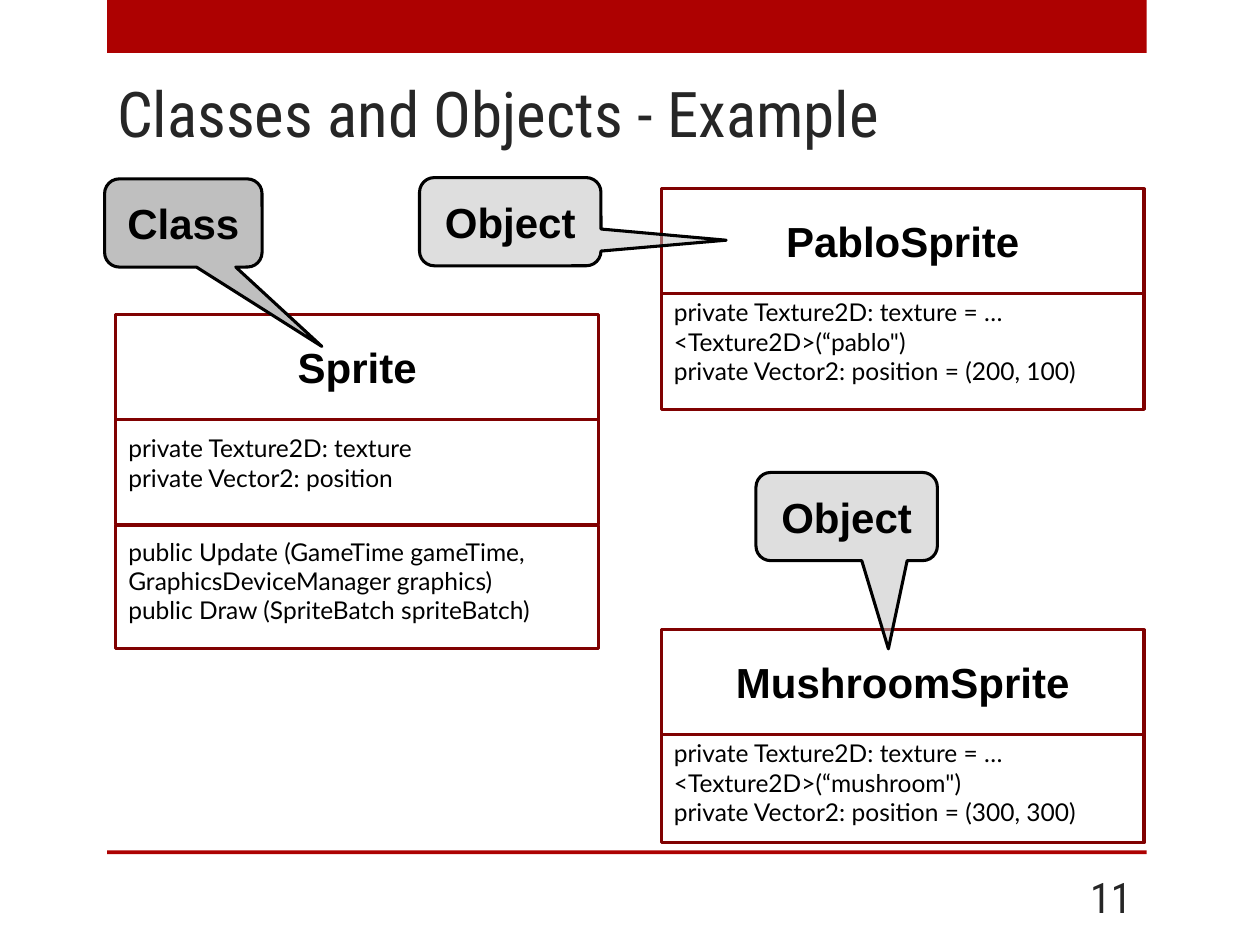
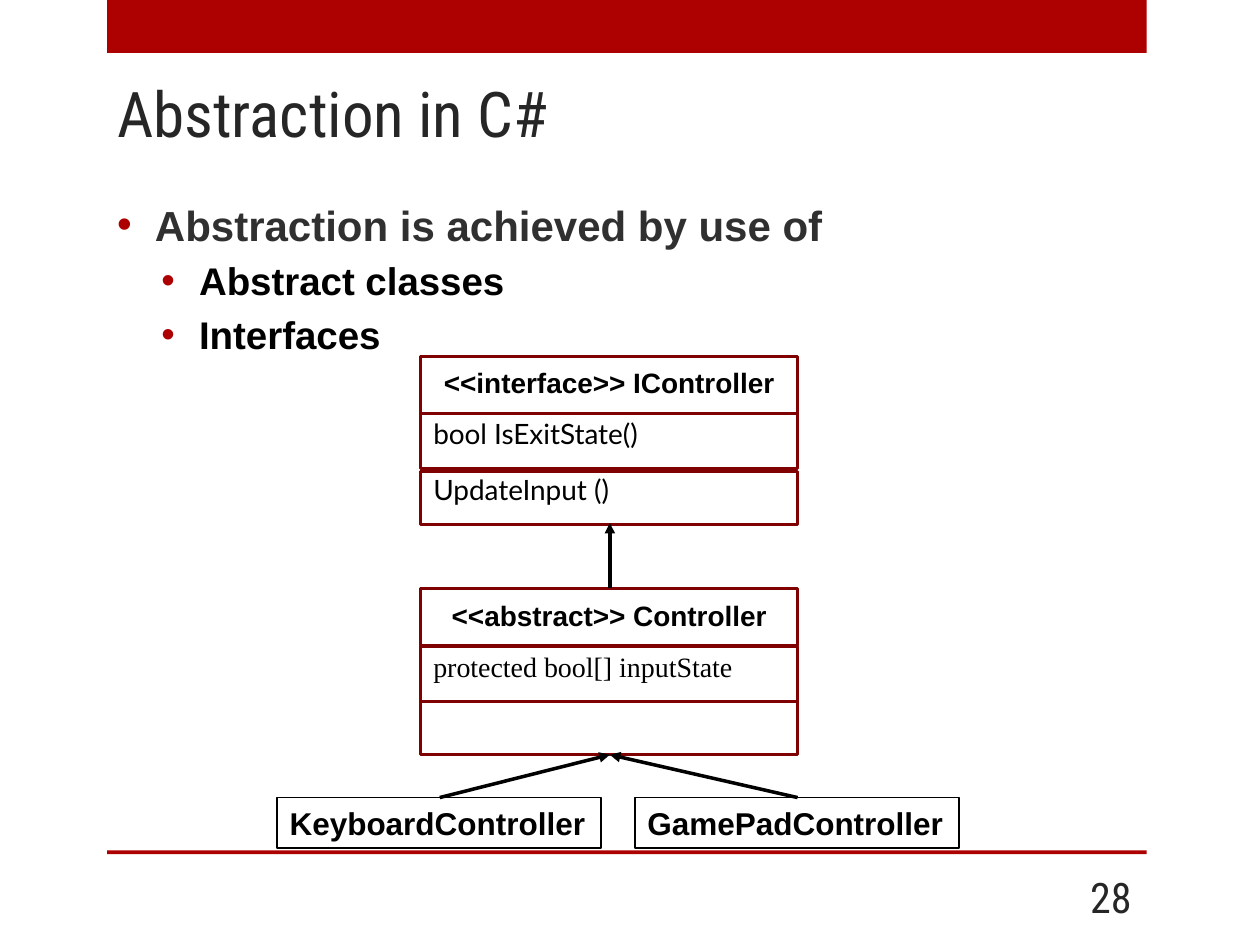
from lxml import etree
from pptx import Presentation
from pptx.dml.color import RGBColor
from pptx.enum.shapes import MSO_CONNECTOR, MSO_SHAPE
from pptx.enum.text import MSO_ANCHOR, MSO_AUTO_SIZE, PP_ALIGN
from pptx.oxml.ns import qn
from pptx.util import Pt

# Shared look; lengths are px at 100 to the inch
PX = 9144
RED, DARK_RED, BLACK = "AD0101", "800101", "000000"
TITLE_GREY, BODY_GREY, CALLOUT_GREY = "262626", "303030", "BFBFBF"
HEAD_FONT, BOLD_FONT, CODE_FONT = "Roboto Condensed", "Arial", "Lato"
TITLE_ONLY, TITLE_AND_BODY = 5, 1


def px(*lengths):
    return [n * PX for n in lengths]


def rgb(color):
    return RGBColor.from_string(color)


def style(p, size, font, color=BLACK, bold=False, align=PP_ALIGN.LEFT):
    p.alignment = align
    p.font.size = Pt(size)
    p.font.name = font
    p.font.bold = bold
    p.font.color.rgb = rgb(color)


def place(sp, left, top, width, height):
    sp.left, sp.top, sp.width, sp.height = px(left, top, width, height)


def add_box(slide, box, fill=None, line=None, width=1.75, kind=MSO_SHAPE.RECTANGLE):
    sp = slide.shapes.add_shape(kind, *px(*box))
    sp.shadow.inherit = False
    if fill:
        sp.fill.solid()
        sp.fill.fore_color.rgb = rgb(fill)
    else:
        sp.fill.background()
    if line:
        sp.line.color.rgb = rgb(line)
        sp.line.width = Pt(width)
    else:
        sp.line.fill.background()
    return sp


def add_label(slide, box, lines, size, font, **look):
    tf = slide.shapes.add_textbox(*px(*box)).text_frame
    tf.word_wrap = True
    tf.text = "\n".join(lines)
    for p in tf.paragraphs:
        style(p, size, font, **look)
    return tf


def add_base(prs, layout, title, number):
    """New slide with bands, title and slide number."""
    slide = prs.slides.add_slide(prs.slide_layouts[layout])
    add_box(slide, (85, 0, 825, 42), fill=RED)
    add_box(slide, (85, 675, 825, 3), fill=RED)
    place(slide.shapes.title, 83, 53, 825, 72)
    tf = slide.shapes.title.text_frame
    tf.text = title
    tf.auto_size = MSO_AUTO_SIZE.NONE
    style(tf.paragraphs[0], 36, HEAD_FONT, TITLE_GREY)
    tf = add_label(slide, (825, 692, 83, 40), [number], 24, HEAD_FONT,
                   color=TITLE_GREY, align=PP_ALIGN.RIGHT)
    tf.vertical_anchor = MSO_ANCHOR.MIDDLE
    return slide


def add_class(slide, left, width, name_size, code_size, sections, code_font=CODE_FONT):
    """Class diagram; a section is (top, height, text top, lines), the name first."""
    for i, (top, height, text_top, lines) in enumerate(sections):
        add_box(slide, (left, top, width, height), line=DARK_RED)
        if not lines:
            continue
        size = code_size if i else name_size
        box = (left, text_top, width, 10 + len(lines) * size * 5 // 3)
        if i:
            tf = add_label(slide, box, lines, size, code_font)
        else:
            tf = add_label(slide, box, lines, size, BOLD_FONT, bold=True,
                           align=PP_ALIGN.CENTER)
        tf.auto_size = MSO_AUTO_SIZE.SHAPE_TO_FIT_TEXT


def add_callout(slide, box, text, tip, alpha=None):
    sp = add_box(slide, box, CALLOUT_GREY, BLACK,
                 kind=MSO_SHAPE.ROUNDED_RECTANGULAR_CALLOUT)
    sp.adjustments[0], sp.adjustments[1] = tip
    if alpha:
        color = sp._element.spPr.find(qn("a:solidFill"))[0]
        etree.SubElement(color, qn("a:alpha")).set("val", str(alpha * 1000))
    tf = sp.text_frame
    tf.text = text
    tf.vertical_anchor = MSO_ANCHOR.MIDDLE
    style(tf.paragraphs[0], 24, BOLD_FONT, bold=True, align=PP_ALIGN.CENTER)


def add_subclass(slide, left, name):
    tf = add_box(slide, (left, 633, 257, 40), line=BLACK, width=1).text_frame
    tf.text = name
    tf.word_wrap = False
    tf.auto_size = MSO_AUTO_SIZE.SHAPE_TO_FIT_TEXT
    tf.vertical_anchor = MSO_ANCHOR.TOP
    style(tf.paragraphs[0], 18, BOLD_FONT, bold=True)


def add_arrow(slide, *ends):
    line = slide.shapes.add_connector(MSO_CONNECTOR.STRAIGHT, *px(*ends))
    line.line.color.rgb = rgb(BLACK)
    line.line.width = Pt(2)
    etree.SubElement(line.line._get_or_add_ln(), qn("a:tailEnd")).set("type", "triangle")
    etree.SubElement(line._element.spPr, qn("a:effectLst"))


def add_bullets(slide, box, items):
    """Fill the body; an item is (level, text, size, color)."""
    body = slide.placeholders[1]
    place(body, *box)
    tf = body.text_frame
    tf.text = "\n".join(text for _, text, _, _ in items)
    tf.auto_size = MSO_AUTO_SIZE.NONE
    for p, (level, _, size, color) in zip(tf.paragraphs, items):
        p.level = level
        style(p, size, BOLD_FONT, color, bold=True)
        if level == 0:
            p.line_spacing = 1.5
        pPr = p._p.get_or_add_pPr()
        pPr.set("marL", str((30 + 35 * level) * PX))
        pPr.set("indent", str(-30 * PX))
        bullet_color = etree.Element(qn("a:buClr"))
        etree.SubElement(bullet_color, qn("a:srgbClr")).set("val", RED)
        bullet_font = etree.Element(qn("a:buFont"), typeface="Arial")
        bullet = etree.Element(qn("a:buChar"), char="•")
        # Bullet settings belong before the default run properties
        for el in (bullet_color, bullet_font, bullet):
            pPr.find(qn("a:defRPr")).addprevious(el)


def build_objects(prs):
    slide = add_base(prs, TITLE_ONLY, "Classes and Objects - Example", "11")
    add_class(slide, 92, 383, 24, 14, [
        (250, 83, 266, ["Sprite"]),
        (333, 83, 339, ["private Texture2D: texture", "private Vector2: position"]),
        (417, 98, 421, ["public Update (GameTime gameTime, GraphicsDeviceManager graphics)",
                        "public Draw (SpriteBatch spriteBatch)"]),
    ])
    add_callout(slide, (83, 142, 125, 70), "Class", (0.88, 1.4))

    # Two objects of the class, each with its callout
    objects = [
        ("Pablo", 150, 92, "(200, 100)", (333, 141, 144, 70), (1.19, 0.21)),
        ("Mushroom", 500, 86, "(300, 300)", (600, 375, 144, 70), (0.23, 1.5)),
    ]
    for name, top, height, position, callout, tip in objects:
        add_class(slide, 525, 383, 24, 14, [
            (top, 83, top + 16, [f"{name}Sprite"]),
            (top + 83, height, top + 81,
             [f'private Texture2D: texture = …<Texture2D>(“{name.lower()}")',
              f"private Vector2: position = {position}"]),
        ])
        add_callout(slide, callout, "Object", tip, alpha=50)


def build_abstraction(prs):
    slide = add_base(prs, TITLE_AND_BODY, "Abstraction in C#", "28")
    add_bullets(slide, (83, 133, 825, 167), [
        (0, "Abstraction is achieved by use of", 24, BODY_GREY),
        (1, "Abstract classes", 22, BLACK),
        (1, "Interfaces", 22, BLACK),
    ])
    add_class(slide, 334, 299, 16, 16, [
        (283, 45, 285, ["<<interface>> IController"]),
        (328, 44, 326, ["bool IsExitState()"]),
        (374, 42, 370, ["UpdateInput ()"]),
    ])
    add_class(slide, 334, 299, 16, 16, [
        (467, 45, 470, ["<<abstract>> Controller"]),
        (513, 44, 511, ["protected bool[] inputState"]),
        (557, 42, 557, []),
    ], code_font="Times New Roman")
    add_subclass(slide, 220, "KeyboardController")
    add_subclass(slide, 504, "GamePadController")
    add_arrow(slide, 484, 467, 484, 415)
    for start in (349, 633):
        add_arrow(slide, start, 633, 484, 599)


def main():
    prs = Presentation()
    prs.slide_width, prs.slide_height = px(1000, 750)
    build_objects(prs)
    build_abstraction(prs)
    prs.save("out.pptx")


if __name__ == "__main__":
    main()
